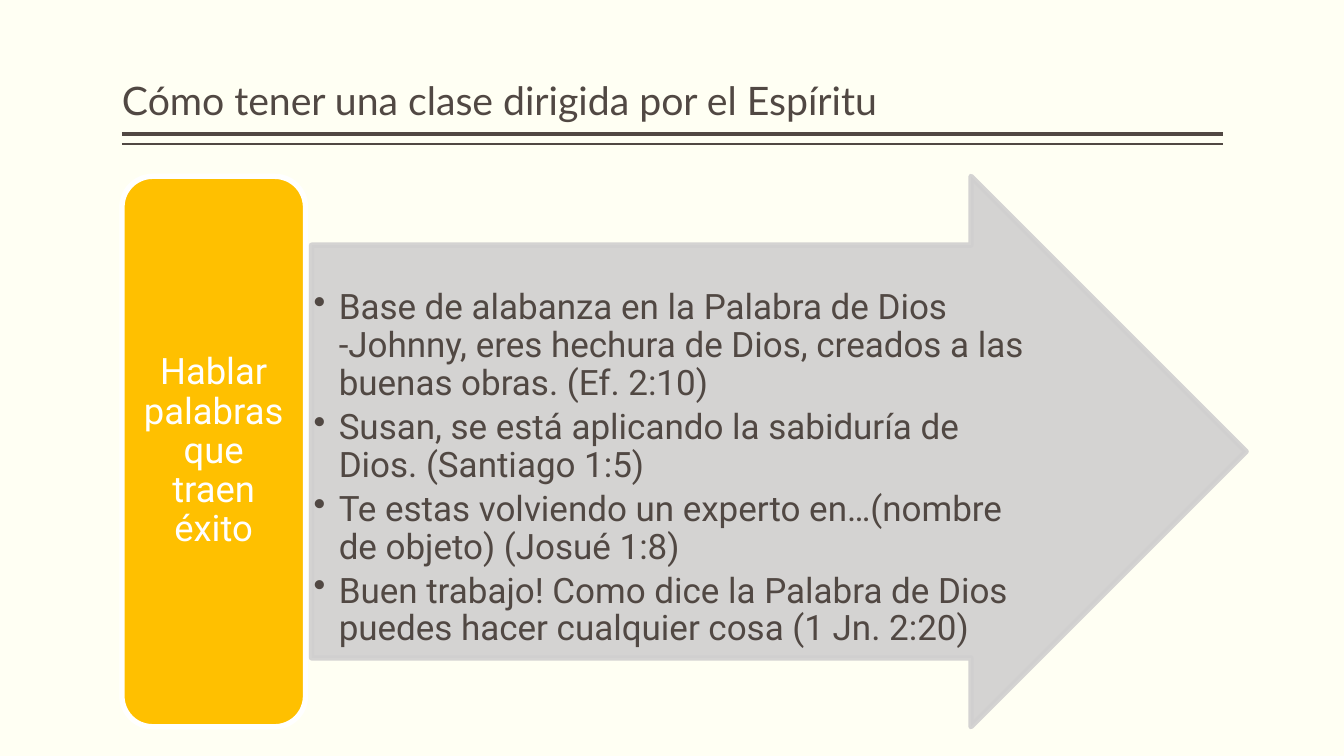
from lxml import etree
from pptx import Presentation
from pptx import util as u
from pptx.dml.color import RGBColor
from pptx.enum import shapes, text
from pptx.oxml.ns import qn

# Content
TITLE = "Cómo tener una clase dirigida por el Espíritu"
LABEL = "Hablar palabras que traen éxito"
POINTS = [
    "Base de alabanza en la Palabra de Dios -Johnny, eres hechura de Dios, "
    "creados a las buenas obras. (Ef. 2:10)",
    "Susan, se está aplicando la sabiduría de Dios. (Santiago 1:5)",
    "Te estas volviendo un experto en…(nombre de objeto) (Josué 1:8)",
    "Buen trabajo! Como dice la Palabra de Dios puedes hacer cualquier cosa (1 Jn. 2:20)",
]

THEME = {
    "bg": "FFFFF3", "ink": "514843", "arrow": "D0CFCF", "label": "FFC000", "white": "FFFFFF",
    "title_font": "Lato", "body_font": "Roboto",
    "title_size": 28, "label_size": 26, "body_size": 25, "outline": 3.78,
}

# Layout, in inches
LEFT, WIDTH = 1.21, 10.92
TOP, HEIGHT = 1.75, 5.46
RULES = [(1.33, 3), (1.43, 1)]  # height, weight in points
LABEL_W = 1.82
ARROW_X, ARROW_W = 3.09, 9.27
HANG = 0.25


def color(name):
    return RGBColor.from_string(THEME[name])


def set_alpha(fill_format, percent):
    clr = fill_format._xPr.find(qn("a:solidFill"))[0]
    etree.SubElement(clr, qn("a:alpha")).set("val", str(percent * 1000))


def add_block(kind, x, w, fill, line):
    sp = slide.shapes.add_shape(kind, *map(u.Inches, (x, TOP, w, HEIGHT)))
    sp.shadow.inherit = False
    sp.fill.solid()
    sp.fill.fore_color.rgb = color(fill)
    sp.line.color.rgb = color(line)
    sp.line.width = u.Pt(THEME["outline"])
    return sp


def write(sp, lines, kind, font, ink, anchor, align, insets, after=0):
    tf = sp.text_frame
    tf.word_wrap = True
    tf.vertical_anchor = anchor
    tf.margin_left, tf.margin_top, tf.margin_right, tf.margin_bottom = map(u.Inches, insets)
    for i, line in enumerate(lines):
        p = tf.paragraphs[0] if i == 0 else tf.add_paragraph()
        p.text = line
        p.alignment = align
        p.line_spacing = 0.9
        p.space_after = u.Pt(after)
        p.font.name = THEME[font]
        p.font.size = u.Pt(THEME[kind])
        p.font.color.rgb = color(ink)
    return tf


def add_bullet(p):
    pPr = p._p.get_or_add_pPr()
    pPr.set("marL", str(u.Inches(HANG)))
    pPr.set("indent", str(-u.Inches(HANG)))
    bullet = etree.Element(qn("a:buChar"), char="•")
    pPr.find(qn("a:defRPr")).addprevious(bullet)


prs = Presentation()
prs.slide_width, prs.slide_height = u.Inches(13.33), u.Inches(7.5)
slide = prs.slides.add_slide(prs.slide_layouts[6])
slide.background.fill.solid()
slide.background.fill.fore_color.rgb = color("bg")

# Title with its double rule
for y, weight in RULES:
    rule = slide.shapes.add_connector(
        shapes.MSO_CONNECTOR.STRAIGHT, *map(u.Inches, (LEFT, y, LEFT + WIDTH, y)))
    rule.line.color.rgb = color("ink")
    rule.line.width = u.Pt(weight)
    etree.SubElement(rule._element.spPr, qn("a:effectLst"))

title = slide.shapes.add_textbox(*map(u.Inches, (LEFT, 0.08, WIDTH, 1.2)))
write(title, [TITLE], "title_size", "title_font", "ink",
      text.MSO_ANCHOR.BOTTOM, text.PP_ALIGN.LEFT, (0, 0.05, 0, 0.05))

# Arrow with the bullet points
arrow = add_block(shapes.MSO_SHAPE.RIGHT_ARROW, ARROW_X, ARROW_W, "arrow", "arrow")
arrow.adjustments[0], arrow.adjustments[1] = 0.75, 0.5
for part in (arrow.fill, arrow.line.fill):
    set_alpha(part, 90)
tf = write(arrow, POINTS, "body_size", "body_font", "ink",
           text.MSO_ANCHOR.TOP, text.PP_ALIGN.LEFT, (0.02, 0.44, 0.02, 0.02), after=4.5)
for p in tf.paragraphs:
    add_bullet(p)

# Label on the left
label = add_block(shapes.MSO_SHAPE.ROUNDED_RECTANGLE, LEFT, LABEL_W, "label", "white")
write(label, [LABEL], "label_size", "body_font", "white",
      text.MSO_ANCHOR.MIDDLE, text.PP_ALIGN.CENTER, (0.11, 0.05, 0.11, 0.05))

prs.save("out.pptx")
